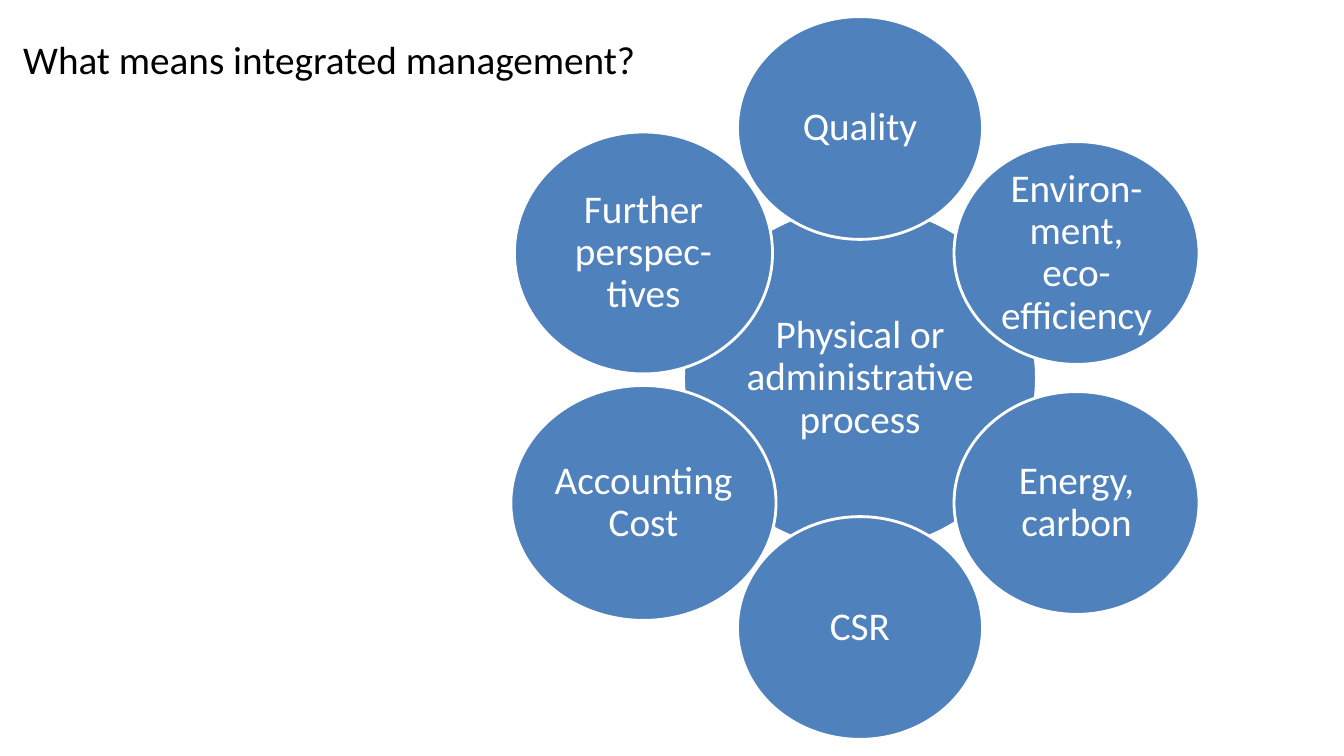
from math import cos, radians, sin

from pptx import Presentation
from pptx.dml.color import RGBColor
from pptx.enum.shapes import MSO_SHAPE as Form
from pptx.enum.text import MSO_ANCHOR as Anchor, MSO_AUTO_SIZE as Fit, PP_ALIGN as Align
from pptx.util import Inches, Pt

color = RGBColor.from_string
BLUE, WHITE, BLACK = "4F81BD", "FFFFFF", "000000"
MARGINS = ("margin_left", "margin_right", "margin_top", "margin_bottom")

deck = Presentation()
deck.slide_width, deck.slide_height = Inches(13.33), Inches(7.5)
slide = deck.slides.add_slide(deck.slide_layouts[5])


def write(shape, text, tint, align, anchor):
    frame = shape.text_frame
    frame.text = text
    frame.word_wrap = True
    frame.auto_size = Fit.NONE
    frame.vertical_anchor = anchor
    para = frame.paragraphs[0]
    para.alignment = align
    for name, value in {"size": Pt(28), "name": "Calibri"}.items():
        setattr(para.font, name, value)
    para.font.color.rgb = color(tint)
    return frame


# Title
title = slide.shapes.title
place = {"left": 0.13, "top": 0.3, "width": 6.54, "height": 0.57}
for name, value in place.items():
    setattr(title, name, Inches(value))
write(title, "What means integrated management?", BLACK, Align.LEFT, Anchor.TOP)

# Hub, then six topics clockwise from the top: text, angle, orbit, width, height
mid_x, mid_y, orbit = 8.53, 3.75, 2.48
discs = [("Physical or administrative process", 0, 0, 3.5, 3.41)]
topics = [
    ("Quality", 2.43, 2.21),
    ("Environ-ment, eco-efficiency", 2.43, 2.21),
    ("Energy, carbon", 2.43, 2.21),
    ("CSR", 2.43, 2.21),
    ("Accounting Cost", 2.63, 2.33),
    ("Further perspec-tives", 2.56, 2.4),
]
for i, (text, wide, high) in enumerate(topics):
    discs.append((text, radians(360 / len(topics) * i), orbit, wide, high))

# Discs
for text, angle, reach, wide, high in discs:
    left = mid_x + reach * sin(angle) - wide / 2
    top = mid_y - reach * cos(angle) - high / 2
    box = [Inches(v) for v in (left, top, wide, high)]
    disc = slide.shapes.add_shape(Form.OVAL, *box)
    disc.shadow.inherit = False
    disc.fill.solid()
    disc.fill.fore_color.rgb = color(BLUE)
    disc.line.color.rgb = color(WHITE)
    disc.line.width = Pt(2)
    frame = write(disc, text, WHITE, Align.CENTER, Anchor.MIDDLE)
    frame.paragraphs[0].line_spacing = 0.9
    for name in MARGINS:
        setattr(frame, name, Inches(0.02))

deck.save("out.pptx")
